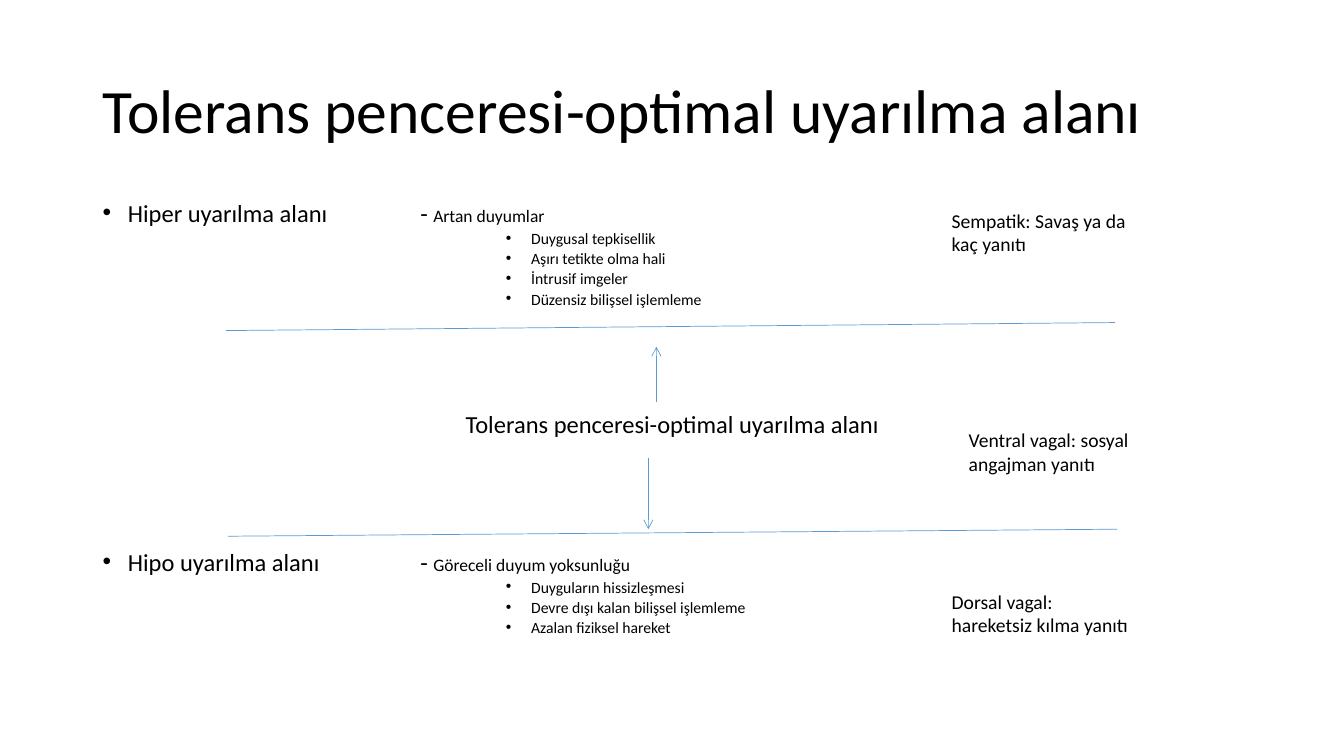
import pptx
import pptx.util
import pptx.dml.color
import pptx.enum.shapes
import pptx.enum.text
import pptx.oxml.ns
import lxml.etree

BLACK = pptx.dml.color.RGBColor(0x00, 0x00, 0x00)
BLUE = pptx.dml.color.RGBColor(0x5B, 0x9B, 0xD5)
FONT = "Calibri"
WIDTH = pptx.util.Inches(13.33)
HEIGHT = pptx.util.Inches(7.5)
LEFT, FULL = 6.9, 86.27
LABEL = "Tolerans penceresi-optimal uyarılma alanı"

ZONES = [
    (26.67, 16, "Hiper uyarılma alanı", "Artan duyumlar",
     ["Duygusal tepkisellik", "Aşırı tetikte olma hali",
      "İntrusif imgeler", "Düzensiz bilişsel işlemleme"]),
    (72.8, 13.33, "Hipo uyarılma alanı", "Göreceli duyum yoksunluğu",
     ["Duyguların hissizleşmesi", "Devre dışı kalan bilişsel işlemleme",
      "Azalan fiziksel hareket"]),
]
RESPONSES = [
    (70.07, 26.93, ["Sempatik: Savaş ya da kaç yanıtı"]),
    (71.34, 56, ["Ventral vagal: sosyal angajman yanıtı"]),
    (70.07, 77.33, ["Dorsal vagal:", "hareketsiz kılma yanıtı"]),
]
BORDERS = [(16.95, 70.93, 83.12, 70), (16.8, 43.73, 82.97, 42.67)]
ARROWS = [(48.84, 53.2, 48.84, 45.87), (48.24, 60.53, 48.24, 70)]


def across(share):
    return round(WIDTH * share / 100)


def down(share):
    return round(HEIGHT * share / 100)


def add_box(page, left, top, width, height):
    box = page.shapes.add_textbox(across(left), down(top), across(width), down(height))
    box.text_frame.word_wrap = True
    return box.text_frame


def add_para(frame, spacing=1.0, before=0):
    first = frame.paragraphs[0]
    para = frame.add_paragraph() if first.runs else first
    para.line_spacing = spacing
    para.space_before = pptx.util.Pt(before)
    return para


def add_span(para, text, size):
    span = para.add_run()
    span.text = text
    span.font.size = pptx.util.Pt(size)
    span.font.name = FONT
    span.font.color.rgb = BLACK


def add_child(parent, tag, **attributes):
    child = lxml.etree.SubElement(parent, pptx.oxml.ns.qn(tag))
    for name, value in attributes.items():
        child.set(name, str(value))
    return child


def set_bullet(para, indent, tab=None):
    props = para._p.get_or_add_pPr()
    props.set("marL", str(pptx.util.Inches(indent)))
    props.set("indent", str(pptx.util.Inches(-0.25)))
    add_child(props, "a:buFont", typeface="Arial")
    add_child(props, "a:buChar", char="•")
    if tab:
        stops = add_child(props, "a:tabLst")
        add_child(stops, "a:tab", pos=pptx.util.Inches(tab), algn="l")


def add_title(page):
    frame = add_box(page, LEFT, 5.33, FULL, 19.33)
    frame.vertical_anchor = pptx.enum.text.MSO_ANCHOR.MIDDLE
    add_span(add_para(frame, 0.9), LABEL, 44)


def add_zone(page, top, height, name, lead, signs):
    frame = add_box(page, LEFT, top, FULL, height)
    para = add_para(frame, 0.7)
    set_bullet(para, 0.25, tab=3.15)
    add_span(para, name + "\t- ", 17.5)
    add_span(para, lead, 12.5)
    for sign in signs:
        para = add_para(frame, 0.7, 5)
        set_bullet(para, 4.25)
        add_span(para, sign, 11.2)


def add_window_label(page):
    para = add_para(add_box(page, LEFT, 54.53, FULL, 5.33), 0.7)
    para.alignment = pptx.enum.text.PP_ALIGN.CENTER
    add_span(para, LABEL, 17.5)


def add_response(page, left, top, lines):
    frame = add_box(page, left, top, 15.08, 7.6)
    frame.auto_size = pptx.enum.text.MSO_AUTO_SIZE.SHAPE_TO_FIT_TEXT
    para = add_para(frame)
    for number, line in enumerate(lines):
        if number:
            para.add_line_break()
        add_span(para, line, 14)


def add_line(page, x1, y1, x2, y2, arrow=False):
    line = page.shapes.add_connector(
        pptx.enum.shapes.MSO_CONNECTOR.STRAIGHT,
        across(x1), down(y1), across(x2), down(y2))
    line.line.color.rgb = BLUE
    line.line.width = pptx.util.Pt(0.5)
    if arrow:
        add_child(line.line._get_or_add_ln(), "a:tailEnd", type="arrow")
    add_child(line._element.spPr, "a:effectLst")


def main():
    deck = pptx.Presentation()
    deck.slide_width = WIDTH
    deck.slide_height = HEIGHT
    page = deck.slides.add_slide(deck.slide_layouts[6])
    add_title(page)
    for zone in ZONES:
        add_zone(page, *zone)
    add_window_label(page)
    for border in BORDERS:
        add_line(page, *border)
    for arrow in ARROWS:
        add_line(page, *arrow, arrow=True)
    for response in RESPONSES:
        add_response(page, *response)
    deck.save("out.pptx")


if __name__ == "__main__":
    main()
